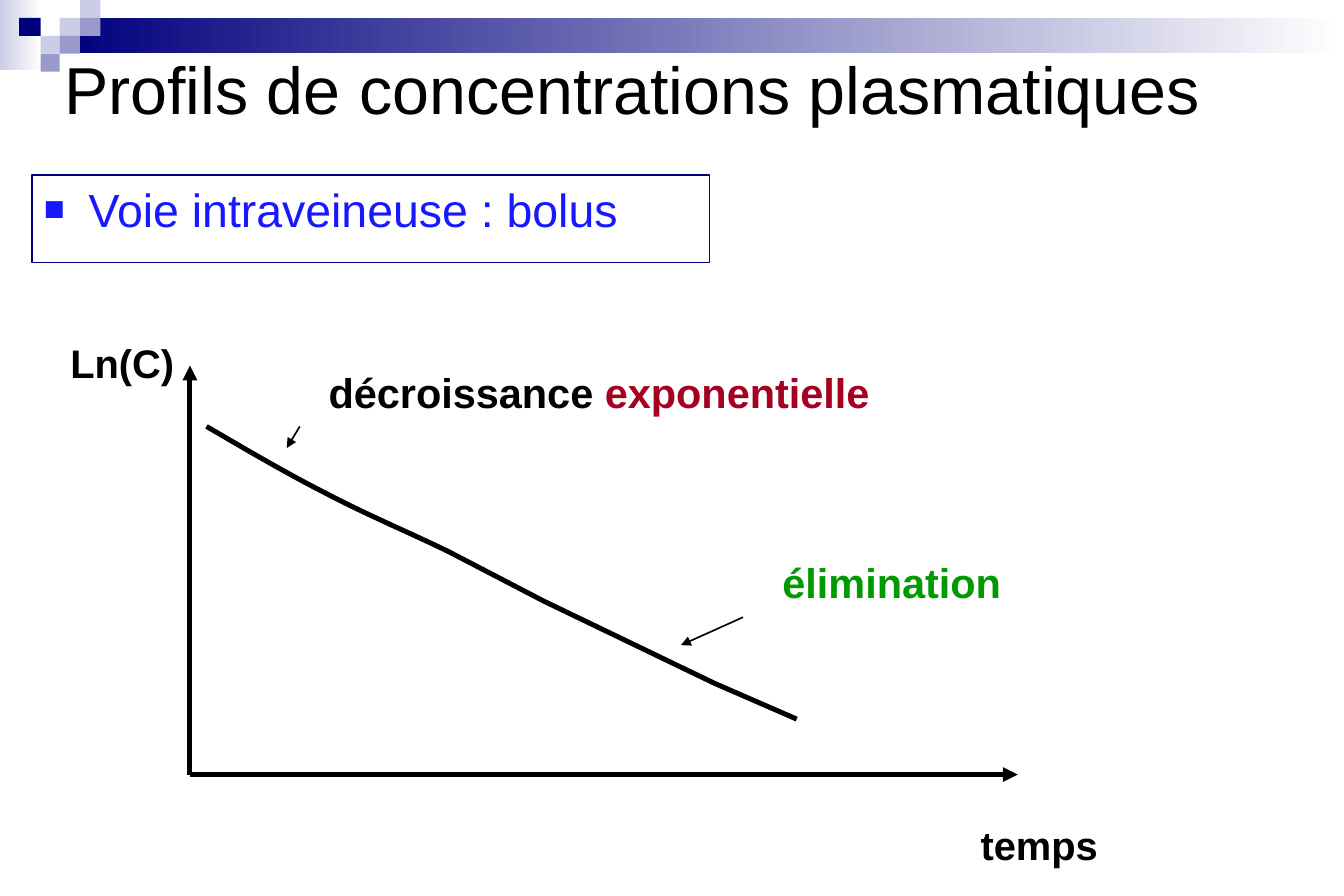
from lxml.etree import SubElement
from pptx import Presentation
from pptx.dml.color import RGBColor
from pptx.enum.shapes import MSO_CONNECTOR, MSO_SHAPE
from pptx.enum.text import MSO_ANCHOR, PP_ALIGN
from pptx.oxml.ns import qn
from pptx.util import Pt

BLACK = RGBColor(0x00, 0x00, 0x00)
NAVY = RGBColor(0x00, 0x00, 0x7D)
LILAC = RGBColor(0x99, 0x99, 0xCC)
PALE = RGBColor(0xCC, 0xCC, 0xE6)
WHITE = RGBColor(0xFF, 0xFF, 0xFF)
BLUE = RGBColor(0x18, 0x18, 0xFF)
RED = RGBColor(0xA5, 0x00, 0x21)
GREEN = RGBColor(0x00, 0x99, 0x00)


def add_rect(x, y, w, h):
    sp = s.shapes.add_shape(MSO_SHAPE.RECTANGLE, Pt(x), Pt(y), Pt(w), Pt(h))
    sp.shadow.inherit = False
    sp.line.fill.background()
    return sp


def write(tf, runs, size, margins, bold=False):
    """Fill the first paragraph with (text, colour) runs and return it."""
    side, top = margins
    frame = dict(margin_left=Pt(side), margin_right=Pt(side),
                 margin_top=Pt(top), margin_bottom=Pt(top), word_wrap=True)
    for name, value in frame.items():
        setattr(tf, name, value)
    p = tf.paragraphs[0]
    p.alignment = PP_ALIGN.LEFT
    for text, colour in runs:
        r = p.add_run()
        r.text = text
        r.font.color.rgb = colour
        for name, value in dict(name="Arial", size=Pt(size), bold=bold).items():
            setattr(r.font, name, value)
    return p


prs = Presentation()
prs.slide_width, prs.slide_height = Pt(810), Pt(540)
s = prs.slides.add_slide(prs.slide_layouts[6])

# Header: two gradient bands under a mosaic of small tiles
for box, start in [((0, 0, 25.2, 42), PALE), ((36.5, 10.8, 773.5, 21.2), NAVY)]:
    sp = add_rect(*box)
    sp.fill.gradient()
    sp.fill.gradient_angle = 0
    for stop, colour in zip(sp.fill.gradient_stops, (start, WHITE)):
        stop.color.rgb = colour

COLUMNS = [11.5, 24.5, 36, 48.25, 60.5]
ROW = 10.8
for col, row, colour in [(2, 1, PALE), (3, 0, PALE), (3, 1, LILAC), (1, 2, PALE),
                         (0, 1, NAVY), (2, 2, LILAC), (1, 3, LILAC)]:
    sp = add_rect(COLUMNS[col], row * ROW, COLUMNS[col + 1] - COLUMNS[col], ROW)
    sp.fill.solid()
    sp.fill.fore_color.rgb = colour

# Title and framed bullet
tf = s.shapes.add_textbox(Pt(31.7), Pt(20.2), Pt(764.6), Pt(65.5)).text_frame
tf.vertical_anchor = MSO_ANCHOR.MIDDLE
write(tf, [("Profils de concentrations plasmatiques", BLACK)], 40, (7.2, 3.6))

sp = add_rect(19.4, 105.6, 408.2, 52.6)
sp.fill.background()
sp.line.color.rgb = NAVY
sp.line.width = Pt(1)
sp.text_frame.vertical_anchor = MSO_ANCHOR.TOP
p = write(sp.text_frame, [("Voie intraveineuse : bolus", BLUE)], 28, (7.2, 3.6))
pPr = p._p.get_or_add_pPr()
pPr.set("marL", str(Pt(27)))
pPr.set("indent", str(Pt(-27)))
SubElement(SubElement(pPr, qn("a:buClr")), qn("a:srgbClr"), val=str(BLUE))
SubElement(pPr, qn("a:buSzPct"), val="75000")
SubElement(pPr, qn("a:buFont"), typeface="Arial")
SubElement(pPr, qn("a:buChar"), char="■")

# Axes and pointers
ORIGIN = (114.5, 466.8)
for start, end, width in [(ORIGIN, (114.5, 220.3), 3), (ORIGIN, (613.4, 466.8), 3),
                          ((180.7, 257), (172.8, 270), 1),
                          ((447.8, 372), (410.4, 388.8), 1)]:
    line = s.shapes.add_connector(MSO_CONNECTOR.STRAIGHT, *map(Pt, start + end))
    line.line.color.rgb = BLACK
    line.line.width = Pt(width)
    SubElement(line.line._ln, qn("a:tailEnd"), type="triangle")
    SubElement(line._element.spPr, qn("a:effectLst"))

# Decay curve: two Bézier arcs sampled in short steps, then straight segments
STEPS = 12
ARCS = [[(124.5, 257), (136.8, 264.2), (172.1, 285.1), (196.6, 297.4)],
        [(196.6, 297.4), (221, 310.3), (250.6, 322.6), (272.2, 333.4)]]
curve = [ARCS[0][0]]
for arc in ARCS:
    for i in range(1, STEPS + 1):
        t = i / STEPS
        weights = ((1 - t) ** 3, 3 * t * (1 - t) ** 2, 3 * t ** 2 * (1 - t), t ** 3)
        curve.append(tuple(sum(w * v for w, v in zip(weights, axis))
                           for axis in zip(*arc)))
curve += [(327.6, 362.2), (430.6, 411.8), (480.2, 433.4)]
points = [(Pt(x), Pt(y)) for x, y in curve]
builder = s.shapes.build_freeform(*points[0])
builder.add_line_segments(points[1:], close=False)
sp = builder.convert_to_shape()
sp.shadow.inherit = False
sp.fill.background()
sp.line.color.rgb = BLACK
sp.line.width = Pt(3)

# Labels
for box, size, runs in [
    ((586, 496, 90, 28.8), 24, [("temps", BLACK)]),
    ((37.4, 205.9, 77, 28.8), 24, [("Ln(C)", BLACK)]),
    ((193, 223.2, 370.8, 30.2), 25, [("décroissance ", BLACK), ("exponentielle", RED)]),
    ((466.6, 337.7, 182.9, 30.2), 25, [("élimination", GREEN)]),
]:
    tf = s.shapes.add_textbox(*map(Pt, box)).text_frame
    p = write(tf, runs, size, (5, 2.4), bold=True)
    p.line_spacing = 0.87

prs.save("out.pptx")
